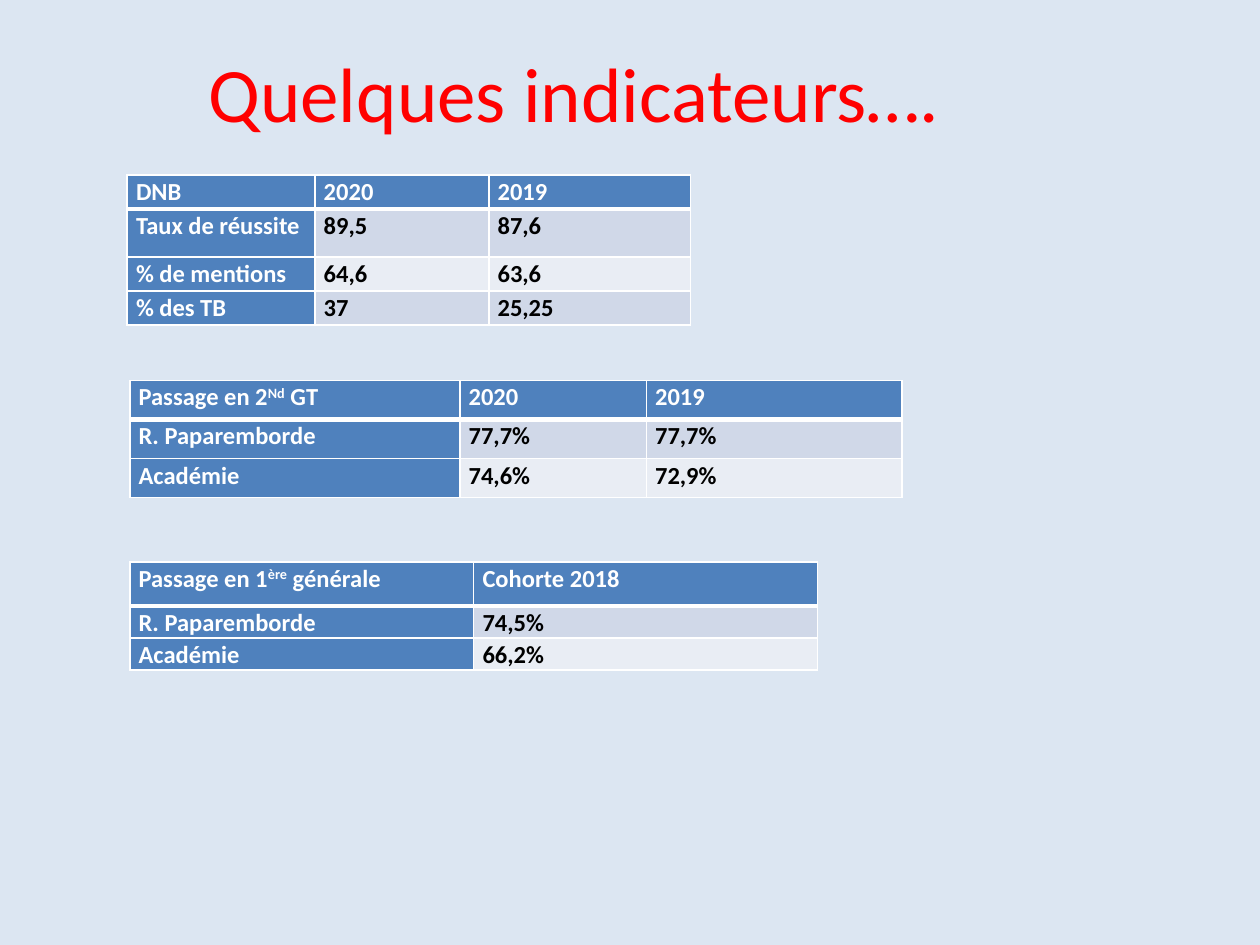
from dataclasses import dataclass

from lxml import etree
from pptx import Presentation
from pptx.dml.color import RGBColor
from pptx.enum.text import MSO_ANCHOR, PP_ALIGN
from pptx.oxml.ns import qn
from pptx.util import Inches, Pt

MIDDLE, TOP = MSO_ANCHOR.MIDDLE, MSO_ANCHOR.TOP
CENTER, LEFT = PP_ALIGN.CENTER, PP_ALIGN.LEFT
TITLE_ONLY = 5
GRID_COLUMNS, GRID_ROWS = 100, 75
UNIT = Inches(0.1)


@dataclass(frozen=True)
class Theme:
    """Colours, type sizes and line widths of the slide."""
    font: str = "Calibri"
    background: str = "DCE6F2"
    title: str = "FF0000"
    heading_fill: str = "4F81BD"
    heading_text: str = "FFFFFF"
    value_text: str = "000000"
    bands: tuple = ("D0D8E8", "E9EDF4")
    border: str = "FFFFFF"
    title_size: int = 44
    table_size: int = 14
    thin: int = 1
    thick: int = 3


THEME = Theme()

TITLE_BOX = (5, 3, 81.2, 8.5)
TABLES = [
    ((10.1, 13.9), (14.9, 13.8, 16), (2.7, 3.8, 2.7, 2.7), [
        ("DNB", "2020", "2019"),
        ("Taux de réussite", "89,5", "87,6"),
        ("% de mentions", "64,6", "63,6"),
        ("% des TB", "37", "25,25"),
    ]),
    ((10.3, 30.2), (26.2, 14.8, 20.3), (3.1, 3.1, 3.1), [
        ("Passage en 2^Nd^ GT", "2020", "2019"),
        ("R. Paparemborde", "77,7%", "77,7%"),
        ("Académie", "74,6%", "72,9%"),
    ]),
    ((10.3, 44.6), (27.3, 27.3), (3.5, 2.5, 2.5), [
        ("Passage en 1^ère^ générale", "Cohorte 2018"),
        ("R. Paparemborde", "74,5%"),
        ("Académie", "66,2%"),
    ]),
]


def grid(cells):
    """Convert a number of grid cells to a length."""
    return int(UNIT * cells)


def write_text(frame, text, *, size, color, bold=False, align=LEFT, spacing=1.0):
    """Write one paragraph, raising the parts between carets."""
    para = frame.paragraphs[0]
    para.alignment, para.line_spacing = align, spacing
    for index, part in enumerate(text.split("^")):
        span = para.add_run()
        span.text = part
        span.font.name, span.font.size, span.font.bold = THEME.font, Pt(size), bold
        span.font.color.rgb = RGBColor.from_string(color)
        if index % 2:
            span._r.get_or_add_rPr().set("baseline", "30000")


def set_borders(cell, top, bottom):
    """Draw the four borders of a cell."""
    properties = cell._tc.get_or_add_tcPr()
    widths = {"lnL": THEME.thin, "lnR": THEME.thin, "lnT": top, "lnB": bottom}
    for side, width in widths.items():
        line = etree.SubElement(properties, qn(f"a:{side}"), w=str(Pt(width)))
        fill = etree.SubElement(line, qn("a:solidFill"))
        etree.SubElement(fill, qn("a:srgbClr"), val=THEME.border)


def format_cell(cell, text, row, column):
    """Fill, border and write a cell according to its place in the table."""
    heading = row == 0 or column == 0
    set_borders(cell,
                top=THEME.thick if row == 1 else THEME.thin,
                bottom=THEME.thick if row == 0 else THEME.thin)
    color = THEME.heading_fill if heading else THEME.bands[(row - 1) % 2]
    cell.fill.solid()
    cell.fill.fore_color.rgb = RGBColor.from_string(color)
    cell.margin_left = cell.margin_right = Inches(0.07)
    cell.margin_top = cell.margin_bottom = 0
    cell.vertical_anchor = TOP
    write_text(cell.text_frame, text, size=THEME.table_size, bold=True, spacing=1.07,
               color=THEME.heading_text if heading else THEME.value_text)


def add_title(page, box, text):
    """Place and format the title placeholder in the given box."""
    title = page.shapes.title
    title.left, title.top, title.width, title.height = map(grid, box)
    title.text_frame.vertical_anchor = MIDDLE
    write_text(title.text_frame, text, size=THEME.title_size, color=THEME.title, align=CENTER)


def add_indicator_table(page, corner, columns, rows, records):
    """Add a table of indicators from its top left corner."""
    box = (*corner, sum(columns), sum(rows))
    table = page.shapes.add_table(len(rows), len(columns), *map(grid, box)).table
    for column, width in zip(table.columns, columns):
        column.width = grid(width)
    for row, height in zip(table.rows, rows):
        row.height = grid(height)
    for row, record in enumerate(records):
        for column, text in enumerate(record):
            format_cell(table.cell(row, column), text, row, column)


def main():
    """Build and save the deck."""
    deck = Presentation()
    deck.slide_width, deck.slide_height = grid(GRID_COLUMNS), grid(GRID_ROWS)
    page = deck.slides.add_slide(deck.slide_layouts[TITLE_ONLY])
    page.background.fill.solid()
    page.background.fill.fore_color.rgb = RGBColor.from_string(THEME.background)
    add_title(page, TITLE_BOX, "Quelques indicateurs….")
    for corner, columns, rows, records in TABLES:
        add_indicator_table(page, corner, columns, rows, records)
    deck.save("out.pptx")


if __name__ == "__main__":
    main()
